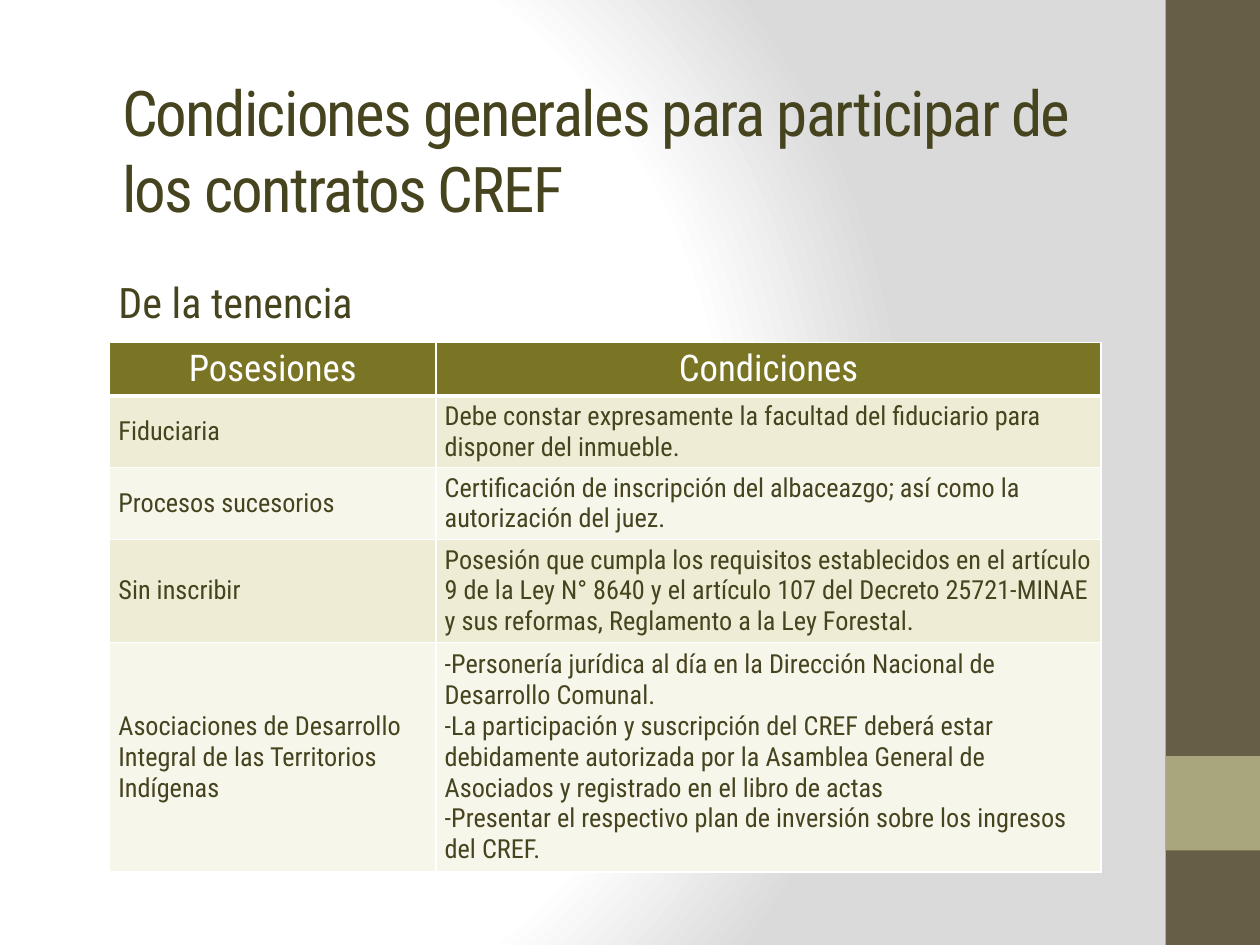
from dataclasses import dataclass

from pptx import Presentation
from pptx.dml.color import RGBColor
from pptx.enum.shapes import MSO_SHAPE
from pptx.enum.text import MSO_ANCHOR, PP_ALIGN
from pptx.oxml import parse_xml
from pptx.oxml.ns import nsdecls, qn
from pptx.slide import Slide
from pptx.table import _Cell
from pptx.text.text import TextFrame
from pptx.util import Inches, Pt

FONT = "Roboto Condensed"
WHITE = RGBColor(0xFF, 0xFF, 0xFF)
DARK_OLIVE = RGBColor(0x46, 0x43, 0x1F)
HEADER_OLIVE = RGBColor(0x7A, 0x74, 0x25)
BANDS = (RGBColor(0xEE, 0xEC, 0xD4), RGBColor(0xF7, 0xF6, 0xEB))
BROWN = RGBColor(0x67, 0x5E, 0x47)
SAGE = RGBColor(0xA9, 0xA5, 0x7C)
GREY = RGBColor(0xDA, 0xDA, 0xDA)

LEFT = 0.87
COLUMN_WIDTHS = (2.59, 5.28)
HEADINGS = ("Posesiones", "Condiciones")


@dataclass(frozen=True)
class Tenure:
    name: str
    conditions: str
    height: float


@dataclass(frozen=True)
class SideBlock:
    top: float
    height: float
    color: RGBColor


TENURES = (
    Tenure("Fiduciaria",
           "Debe constar expresamente la facultad del fiduciario para disponer del inmueble.", 0.57),
    Tenure("Procesos sucesorios",
           "Certificación de inscripción del albaceazgo; así como la autorización del juez.", 0.57),
    Tenure("Sin inscribir",
           "Posesión que cumpla los requisitos establecidos en el artículo 9 de la Ley N° 8640 "
           "y el artículo 107 del Decreto 25721-MINAE y sus reformas, "
           "Reglamento a la Ley Forestal.", 0.82),
    Tenure("Asociaciones de Desarrollo Integral de las Territorios Indígenas",
           "-Personería jurídica al día en la Dirección Nacional de Desarrollo Comunal.\n"
           "-La participación y suscripción del CREF deberá estar debidamente autorizada por la "
           "Asamblea General de Asociados y registrado en el libro de actas\n"
           "-Presentar el respectivo plan de inversión sobre los ingresos del CREF.", 1.82),
)
SIDE_BLOCKS = (SideBlock(0, 7.5, BROWN), SideBlock(6, 0.75, SAGE))


def paint_background(slide: Slide) -> None:
    """Fill the slide with a circular gradient, white inside and grey outside."""
    slide.background.fill.gradient()
    default = slide.element.find(".//" + qn("a:gradFill"))
    stops = "".join(
        f'<a:gs pos="{percent * 1000}"><a:srgbClr val="{color}"/></a:gs>'
        for percent, color in ((0, WHITE), (75, WHITE), (100, GREY))
    )
    radial = parse_xml(
        f'<a:gradFill {nsdecls("a")} rotWithShape="1"><a:gsLst>{stops}</a:gsLst>'
        '<a:path path="circle"><a:fillToRect l="20000" t="50000" r="100000" b="50000"/></a:path>'
        '</a:gradFill>'
    )
    default.getparent().replace(default, radial)


def draw_side_block(slide: Slide, block: SideBlock) -> None:
    bar = slide.shapes.add_shape(MSO_SHAPE.RECTANGLE, Inches(9.25), Inches(block.top),
                                 Inches(0.75), Inches(block.height))
    bar.shadow.inherit = False
    bar.fill.solid()
    bar.fill.fore_color.rgb = block.color
    bar.line.fill.background()


def write(frame: TextFrame, text: str, size: float, color: RGBColor,
          align: PP_ALIGN = PP_ALIGN.LEFT) -> None:
    frame.text = text
    for paragraph in frame.paragraphs:
        paragraph.alignment = align
        paragraph.font.name = FONT
        paragraph.font.size = Pt(size)
        paragraph.font.color.rgb = color


def add_text(slide: Slide, text: str, top: float, height: float, size: float,
             anchor: MSO_ANCHOR) -> TextFrame:
    frame = slide.shapes.add_textbox(Inches(LEFT), Inches(top),
                                     Inches(8.25), Inches(height)).text_frame
    frame.word_wrap = True
    frame.vertical_anchor = anchor
    write(frame, text, size, DARK_OLIVE)
    return frame


def set_insets(box: TextFrame | _Cell) -> None:
    box.margin_left = box.margin_right = Inches(0.07)
    box.margin_top = box.margin_bottom = Inches(0.04)


def fill_cell(cell: _Cell, text: str, size: float, color: RGBColor, fill: RGBColor,
              align: PP_ALIGN = PP_ALIGN.LEFT, bottom_border: float = 1) -> None:
    write(cell.text_frame, text, size, color, align)
    set_insets(cell)
    cell.vertical_anchor = MSO_ANCHOR.MIDDLE
    cell.fill.solid()
    cell.fill.fore_color.rgb = fill
    properties = cell.fill._xPr
    borders = (("lnL", 1), ("lnR", 1), ("lnT", 1), ("lnB", bottom_border))
    for position, (side, width) in enumerate(borders):
        properties.insert(position, parse_xml(
            f'<a:{side} {nsdecls("a")} w="{Pt(width)}"><a:solidFill>'
            f'<a:srgbClr val="{WHITE}"/></a:solidFill></a:{side}>'
        ))


def draw_tenure_table(slide: Slide) -> None:
    heights = (0.42, *(tenure.height for tenure in TENURES))
    table = slide.shapes.add_table(len(heights), len(COLUMN_WIDTHS), Inches(LEFT), Inches(2.72),
                                   Inches(sum(COLUMN_WIDTHS)), Inches(sum(heights))).table
    for column, width in zip(table.columns, COLUMN_WIDTHS):
        column.width = Inches(width)
    for row, height in zip(table.rows, heights):
        row.height = Inches(height)
    for column, heading in enumerate(HEADINGS):
        fill_cell(table.cell(0, column), heading, 21, WHITE, HEADER_OLIVE, PP_ALIGN.CENTER, 3)
    for index, tenure in enumerate(TENURES):
        for column, text in enumerate((tenure.name, tenure.conditions)):
            fill_cell(table.cell(index + 1, column), text, 15, DARK_OLIVE,
                      BANDS[index % len(BANDS)])


def main() -> None:
    presentation = Presentation()
    presentation.slide_width = Inches(10)
    presentation.slide_height = Inches(7.5)
    slide = presentation.slides.add_slide(presentation.slide_layouts[6])

    paint_background(slide)
    for block in SIDE_BLOCKS:
        draw_side_block(slide, block)
    draw_tenure_table(slide)

    title = add_text(slide, "Condiciones generales para participar de los contratos CREF",
                     0.73, 0.91, 36, MSO_ANCHOR.MIDDLE)
    title.paragraphs[0].runs[0].font._element.set("spc", "-100")

    subtitle = add_text(slide, "De la tenencia", 2.19, 0.45, 24, MSO_ANCHOR.BOTTOM)
    set_insets(subtitle)
    subtitle.paragraphs[0].line_spacing = 0.9

    presentation.save("out.pptx")


if __name__ == "__main__":
    main()
